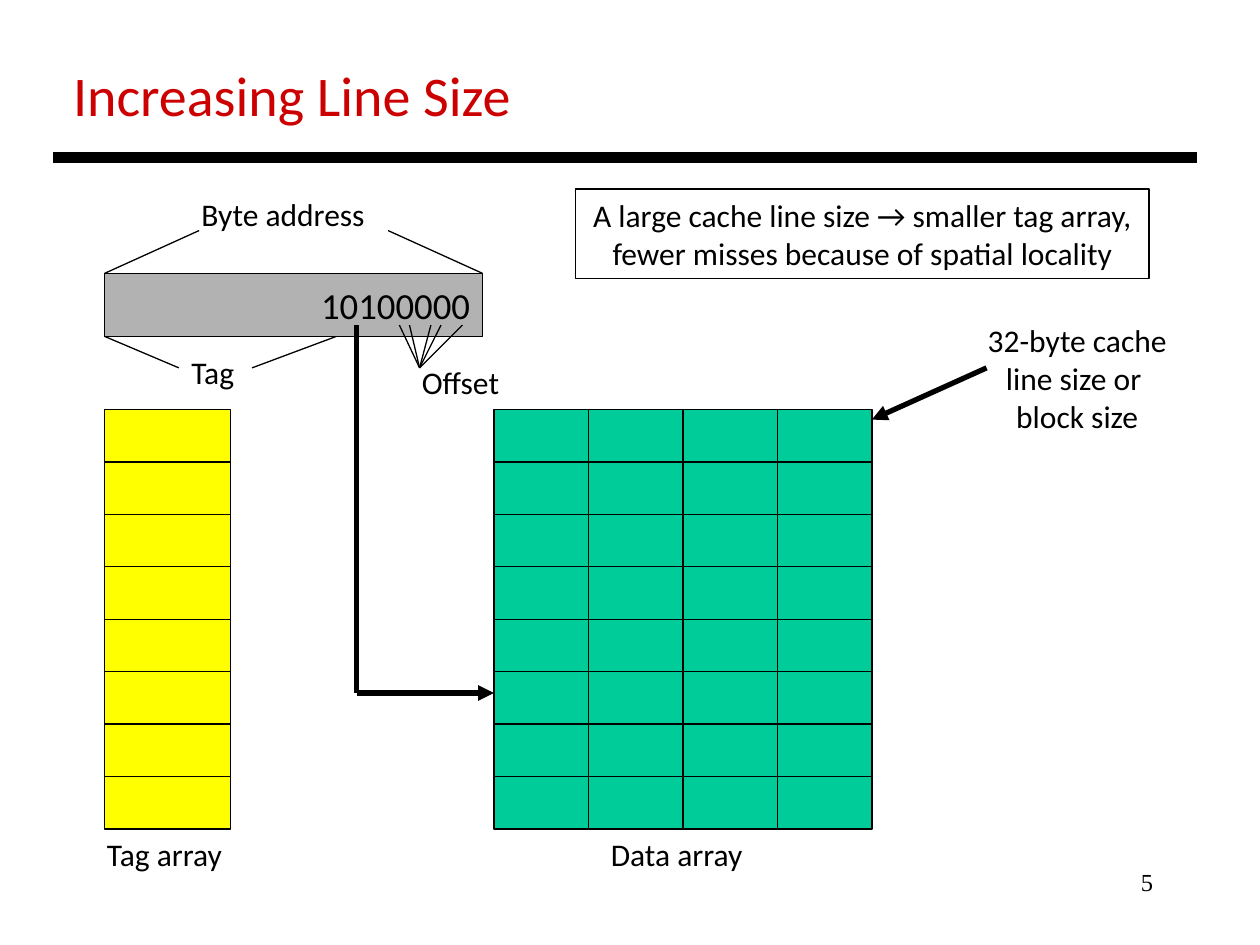
"""Builds the slide on how a larger cache line size affects the tag and data arrays."""
from lxml import etree
from pptx import Presentation
from pptx import util as u
from pptx.dml import color
from pptx.enum import shapes, text
from pptx.oxml import ns

LEFT, CENTER, RIGHT = text.PP_ALIGN.LEFT, text.PP_ALIGN.CENTER, text.PP_ALIGN.RIGHT
BLACK, RED, GREY, YELLOW, GREEN = "000000", "CC0000", "B2B2B2", "FFFF00", "00CC99"


def rgb(value):
    return color.RGBColor.from_string(value)


class Diagram:
    font = "Calibri"
    size = 18
    thin = 0.75
    thick = 3

    def __init__(self, slide):
        self.slide = slide

    def set_text(self, frame, words, size=None, ink=BLACK, align=LEFT, font=None):
        frame.auto_size = text.MSO_AUTO_SIZE.NONE
        frame.word_wrap = False
        frame.text = words
        for paragraph in frame.paragraphs:
            paragraph.alignment = align
            paragraph.font.name = font or self.font
            paragraph.font.size = u.Pt(size or self.size)
            paragraph.font.color.rgb = rgb(ink)

    def title(self, words, x, y, w, h):
        heading = self.slide.shapes.title
        heading.left, heading.top = u.Inches(x), u.Inches(y)
        heading.width, heading.height = u.Inches(w), u.Inches(h)
        self.set_text(heading.text_frame, words, size=32, ink=RED)
        heading.text_frame.vertical_anchor = text.MSO_ANCHOR.TOP

    def label(self, words, x, y, w, h=0.4, **style):
        box = self.slide.shapes.add_textbox(*map(u.Inches, (x, y, w, h)))
        self.set_text(box.text_frame, words, **style)

    def rect(self, x, y, w, h, fill=None, words="", **style):
        box = self.slide.shapes.add_shape(
            shapes.MSO_SHAPE.RECTANGLE, *map(u.Inches, (x, y, w, h)))
        box.shadow.inherit = False
        if fill:
            box.fill.solid()
            box.fill.fore_color.rgb = rgb(fill)
        else:
            box.fill.background()
        box.line.color.rgb = rgb(BLACK)
        box.line.width = u.Pt(self.thin)
        if words:
            self.set_text(box.text_frame, words, **style)

    def line(self, start, end, width=None, arrow=False):
        link = self.slide.shapes.add_connector(
            shapes.MSO_CONNECTOR.STRAIGHT, *map(u.Inches, (*start, *end)))
        link.line.color.rgb = rgb(BLACK)
        link.line.width = u.Pt(width or self.thin)
        properties = link._element.spPr
        if arrow:
            outline = properties.find(ns.qn("a:ln"))
            etree.SubElement(outline, ns.qn("a:tailEnd"), type="triangle")
        etree.SubElement(properties, ns.qn("a:effectLst"))

    def array(self, x, y, columns, rows, cell_width, cell_height, fill):
        for column in range(columns):
            for row in range(rows):
                self.rect(x + column * cell_width, y + row * cell_height,
                          cell_width, cell_height, fill)


def main():
    deck = Presentation()
    deck.slide_width, deck.slide_height = u.Inches(10), u.Inches(7.5)
    diagram = Diagram(deck.slides.add_slide(deck.slide_layouts[5]))

    diagram.title("Increasing Line Size", 0.48, 0.43, 3.71, 0.64)
    diagram.line((0.42, 1.25), (9.5, 1.25), width=6)
    diagram.label("5", 7.17, 6.83, 2.08, 0.5, size=14, align=RIGHT,
                  font="Times New Roman")

    arrays_top, rows = 3.25, 8
    row_height = 3.33 / rows
    diagram.array(0.83, arrays_top, 1, rows, 1, row_height, YELLOW)
    diagram.array(3.92, arrays_top, 4, rows, 0.75, row_height, GREEN)
    diagram.label("Tag array", 0.75, 6.58, 1.12)
    diagram.label("Data array", 4.75, 6.58, 1.26)

    diagram.label("Byte address", 1.5, 1.5, 1.51)
    diagram.rect(0.83, 2.17, 3, 0.5, GREY, "10100000", size=21, align=RIGHT)
    diagram.label("Tag", 1.42, 2.75, 0.55)
    diagram.label("Offset", 3.25, 2.83, 0.82)
    braces = [
        ((1.58, 1.83), (0.83, 2.17)),
        ((3.08, 1.83), (3.83, 2.17)),
        ((0.83, 2.67), (1.42, 2.92)),
        ((2, 2.92), (2.67, 2.67)),
    ]
    for start, end in braces:
        diagram.line(start, end)
    for offset_bit in (3.17, 3.25, 3.42, 3.5, 3.67):
        diagram.line((offset_bit, 2.58), (3.33, 2.92))

    index_corner = (2.83, 5.5)
    diagram.line((2.83, 2.58), index_corner, diagram.thick)
    diagram.line(index_corner, (3.92, 5.5), diagram.thick, arrow=True)

    diagram.label("32-byte cache\nline size or \nblock size", 7.73, 2.5, 1.64, 1.01,
                  align=CENTER)
    diagram.line((7.83, 2.92), (6.92, 3.33), diagram.thick, arrow=True)
    diagram.rect(4.57, 1.5, 4.55, 0.71, align=CENTER,
                 words="A large cache line size → smaller tag array,\n"
                       "fewer misses because of spatial locality")

    deck.save("out.pptx")


if __name__ == "__main__":
    main()
